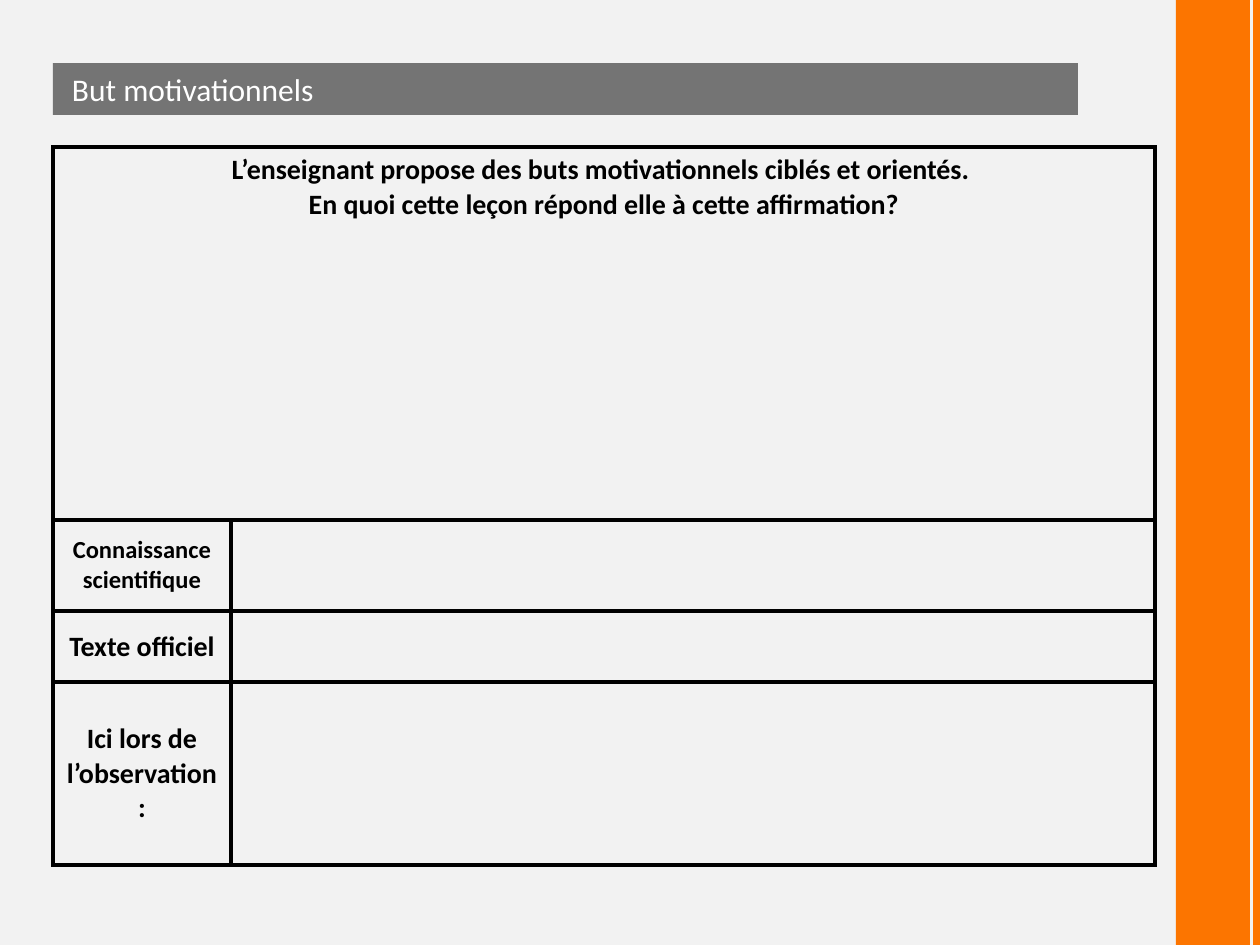
import pptx
import pptx.dml.color
import pptx.enum.shapes
import pptx.enum.text
import pptx.oxml
import pptx.oxml.ns
import pptx.util

RGB = pptx.dml.color.RGBColor
PAPER = RGB(0xF2, 0xF2, 0xF2)
ORANGE = RGB(0xFC, 0x75, 0x00)
DARK = RGB(0x0D, 0x0D, 0x0D)
WHITE = RGB(0xFF, 0xFF, 0xFF)
BLACK = RGB(0x00, 0x00, 0x00)
ALIGN = pptx.enum.text.PP_ALIGN
ANCHOR = pptx.enum.text.MSO_ANCHOR


def px(count):
    return pptx.util.Emu(round(count * 914400 / 126))


def box(*sides):
    return [px(side) for side in sides]


def child(parent, tag, **attrs):
    node = pptx.oxml.parse_xml(f"<a:{tag} {pptx.oxml.ns.nsdecls('a')}/>")
    for name, value in attrs.items():
        node.set(name, str(value))
    parent.append(node)
    return node


class Deck:
    font = "Calibri"
    edge = pptx.util.Pt(2.25)

    def __init__(self, width, height):
        self.file = pptx.Presentation()
        self.file.slide_width = px(width)
        self.file.slide_height = px(height)
        self.slide = self.file.slides.add_slide(self.file.slide_layouts[5])
        fill = self.slide.background.fill
        fill.solid()
        fill.fore_color.rgb = PAPER

    def style(self, para, size, color, bold, align):
        para.alignment = align
        para.font.name = self.font
        para.font.size = pptx.util.Pt(size)
        para.font.color.rgb = color
        para.font.bold = bold

    def title(self, text, area, alpha):
        shape = self.slide.shapes.title
        shape.left, shape.top, shape.width, shape.height = box(*area)
        shape.fill.solid()
        shape.fill.fore_color.rgb = DARK
        tone = shape.fill._xPr.find(".//" + pptx.oxml.ns.qn("a:srgbClr"))
        child(tone, "alpha", val=alpha * 1000)
        frame = shape.text_frame
        frame.text = text
        frame.auto_size = pptx.enum.text.MSO_AUTO_SIZE.NONE
        frame.vertical_anchor = ANCHOR.MIDDLE
        frame.margin_left = px(19)
        frame.margin_top = frame.margin_bottom = px(6)
        self.style(frame.paragraphs[0], 18, WHITE, False, ALIGN.LEFT)

    def band(self, area):
        kind = pptx.enum.shapes.MSO_SHAPE.RECTANGLE
        shape = self.slide.shapes.add_shape(kind, *box(*area))
        shape.shadow.inherit = False
        shape.fill.solid()
        shape.fill.fore_color.rgb = ORANGE
        shape.line.fill.background()

    def line(self, ends, width):
        kind = pptx.enum.shapes.MSO_CONNECTOR.STRAIGHT
        rule = self.slide.shapes.add_connector(kind, *box(*ends))
        rule.line.color.rgb = ORANGE
        rule.line.width = pptx.util.Pt(width)
        child(rule._element.spPr, "effectLst")

    def frame(self, cell):
        props = cell._tc.get_or_add_tcPr()
        for side in "LRTB":
            edge = child(props, "ln" + side, w=self.edge)
            child(child(edge, "solidFill"), "srgbClr", val=BLACK)
        cell.fill.background()

    def label(self, cell, text, size, anchor):
        cell.text = text
        cell.vertical_anchor = anchor
        self.style(cell.text_frame.paragraphs[0], size, BLACK, True, ALIGN.CENTER)

    def table(self, left, top, cols, rows, head, labels):
        area = box(left, top, sum(cols), sum(rows))
        table = self.slide.shapes.add_table(len(rows), len(cols), *area).table
        table.first_row = table.horz_banding = False
        for col, width in zip(table.columns, cols):
            col.width = px(width)
        for row, height in zip(table.rows, rows):
            row.height = px(height)
        for cell in table.iter_cells():
            self.frame(cell)
        table.cell(0, 0).merge(table.cell(0, len(cols) - 1))
        self.label(table.cell(0, 0), head, 16, ANCHOR.TOP)
        for row, (text, size) in enumerate(labels, 1):
            self.label(table.cell(row, 0), text, size, ANCHOR.MIDDLE)


def main():
    deck = Deck(1260, 945)
    deck.band((1176, 0, 74, 945))
    deck.line((1257, 0, 1257, 945), 4)
    deck.title("But motivationnels", (53, 63, 1025, 52), 55)
    deck.table(
        53, 147, (178, 924), (373, 91, 71, 183),
        "L’enseignant propose des buts motivationnels ciblés et orientés. "
        "\vEn quoi cette leçon répond elle à cette affirmation?",
        (
            ("Connaissance scientifique", 14),
            ("Texte officiel", 16),
            ("Ici lors de l’observation:", 16),
        ),
    )
    deck.file.save("out.pptx")


if __name__ == "__main__":
    main()
